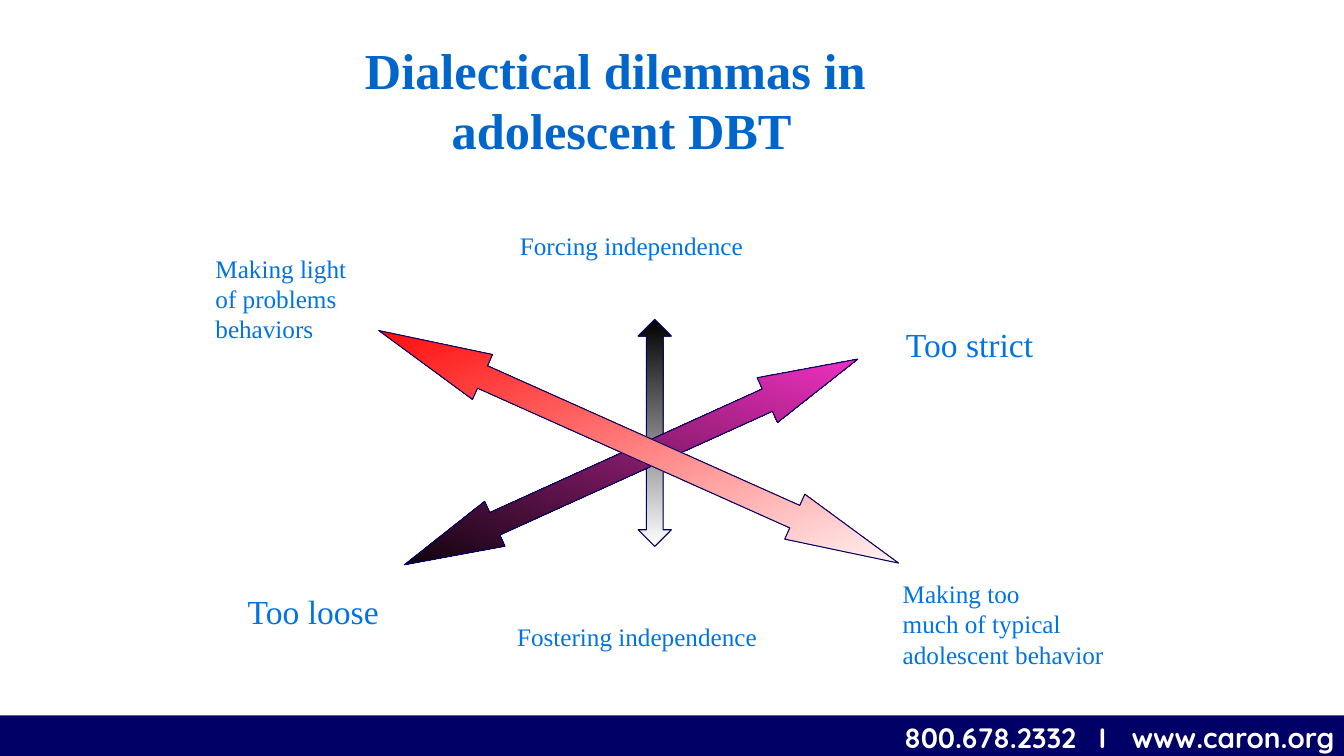
"""Build the slide on dialectical dilemmas in adolescent DBT."""
from lxml import etree
from pptx import Presentation
from pptx import util as u
from pptx.dml.color import RGBColor
from pptx.enum import shapes, text
from pptx.oxml.ns import qn

SERIF = "Times New Roman"
NAVY, WHITE = "000066", "FFFFFF"
TITLE_BLUE, LABEL_BLUE = "0066CC", "0073E5"

ARROWS = [
    ("UP_DOWN_ARROW", (16.08, 8.05, 0.84, 5.72), 0, (1.35, 0.5), "000000", WHITE, 90),
    ("LEFT_RIGHT_ARROW", (9.63, 11.02, 12.55, 1.24), 335.6, (0.5, 2.02), "000000", "FF33CC", 315),
    ("LEFT_RIGHT_ARROW", (8.92, 10.64, 14.35, 1.24), 24.1, (0.5, 2.31), "FF0000", WHITE, 45),
]
LABELS = [
    ("Making light\nof problems\nbehaviors", (5.18, 6.25, 4.11, 2.57), 18),
    ("Forcing independence", (12.85, 5.69, 6.2, 1.02), 18),
    ("Too strict", (22.58, 8.03, 3.76, 1.27), 24),
    ("Too loose", (5.99, 14.76, 3.84, 1.27), 24),
    ("Fostering independence", (12.78, 15.52, 6.63, 1.02), 18),
    ("Making too\nmuch of typical\nadolescent behavior", (22.5, 14.45, 5.61, 2.57), 18),
]


def rgb(value):
    """Return the colour for a hex string."""
    return RGBColor.from_string(value)


def box(values):
    """Return left, top, width and height as lengths."""
    return [u.Cm(v) for v in values]


def set_attrs(obj, values):
    """Set each attribute of an object from a dict."""
    for name, value in values.items():
        setattr(obj, name, value)


def write(tf, content, size, color, font=SERIF, bold=False, align=text.PP_ALIGN.LEFT):
    """Fill a text frame and format its paragraphs."""
    tf.text = content
    for p in tf.paragraphs:
        p.alignment = align
        for r in p.runs:
            set_attrs(r.font, {"name": font, "size": u.Pt(size), "bold": bold})
            r.font.color.rgb = rgb(color)


def add_rect(s, at, fill):
    """Add a plain rectangle without a line."""
    sp = s.shapes.add_shape(shapes.MSO_SHAPE.RECTANGLE, *box(at))
    sp.shadow.inherit = False
    sp.fill.solid()
    sp.fill.fore_color.rgb = rgb(fill)
    sp.line.fill.background()
    return sp


def add_tabs(p, stops):
    """Give a paragraph left tab stops, in centimetres."""
    tabs = etree.SubElement(p._p.get_or_add_pPr(), qn("a:tabLst"))
    for stop in stops:
        etree.SubElement(tabs, qn("a:tab"), pos=str(u.Cm(stop)), algn="l")


def add_footer(s):
    """Add the contact bar along the bottom edge."""
    tf = add_rect(s, (0, 18.03, 33.87, 1.09), NAVY).text_frame
    set_attrs(tf, {"margin_left": u.Cm(22.79), "margin_right": 0, "word_wrap": True})
    write(tf, "800.678.2332\tI\twww.caron.org", 20, WHITE, "Quicksand", True)
    add_tabs(tf.paragraphs[0], (4.9, 5.73))


def add_title(s):
    """Add the centred two-line title."""
    tf = s.shapes.add_textbox(*box((4.24, 0.92, 22.86, 3.18))).text_frame
    set_attrs(tf, {"word_wrap": True, "vertical_anchor": text.MSO_ANCHOR.MIDDLE})
    write(tf, "Dialectical dilemmas in \vadolescent DBT", 36, TITLE_BLUE,
          bold=True, align=text.PP_ALIGN.CENTER)


def add_arrow(s, kind, at, rotation, adjustments, start, end, angle):
    """Add a double-headed arrow with a clockwise gradient angle."""
    sp = s.shapes.add_shape(getattr(shapes.MSO_SHAPE, kind), *box(at))
    sp.shadow.inherit = False
    sp.rotation = rotation
    for i, value in enumerate(adjustments):
        sp.adjustments[i] = value
    sp.fill.gradient()
    sp.fill.gradient_angle = 360 - angle
    for stop, color in zip(sp.fill.gradient_stops, (start, end)):
        stop.color.rgb = rgb(color)
    sp.line.color.rgb = rgb(NAVY)
    sp.line.width = u.Pt(0.75)


def add_label(s, content, at, size):
    """Add a white label at one end of an arrow."""
    tf = add_rect(s, at, WHITE).text_frame
    set_attrs(tf, {"word_wrap": False, "vertical_anchor": text.MSO_ANCHOR.TOP,
                   "auto_size": text.MSO_AUTO_SIZE.SHAPE_TO_FIT_TEXT})
    write(tf, content, size, LABEL_BLUE)


def main():
    """Build and save the slide."""
    prs = Presentation()
    set_attrs(prs, {"slide_width": u.Cm(33.87), "slide_height": u.Cm(19.05)})
    s = prs.slides.add_slide(prs.slide_layouts[6])
    add_footer(s)
    add_title(s)
    for arrow in ARROWS:
        add_arrow(s, *arrow)
    for label in LABELS:
        add_label(s, *label)
    prs.save("out.pptx")


if __name__ == "__main__":
    main()
